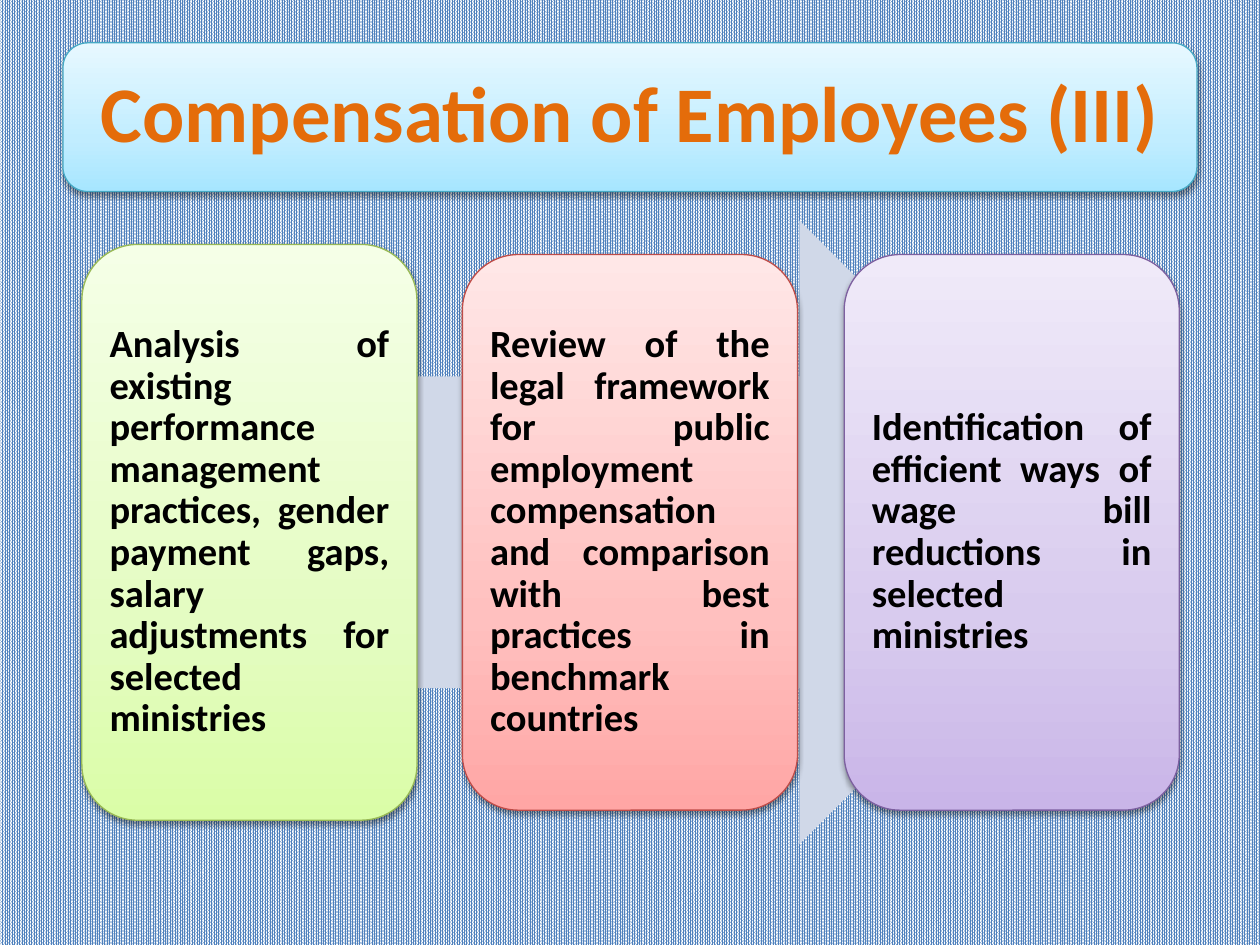
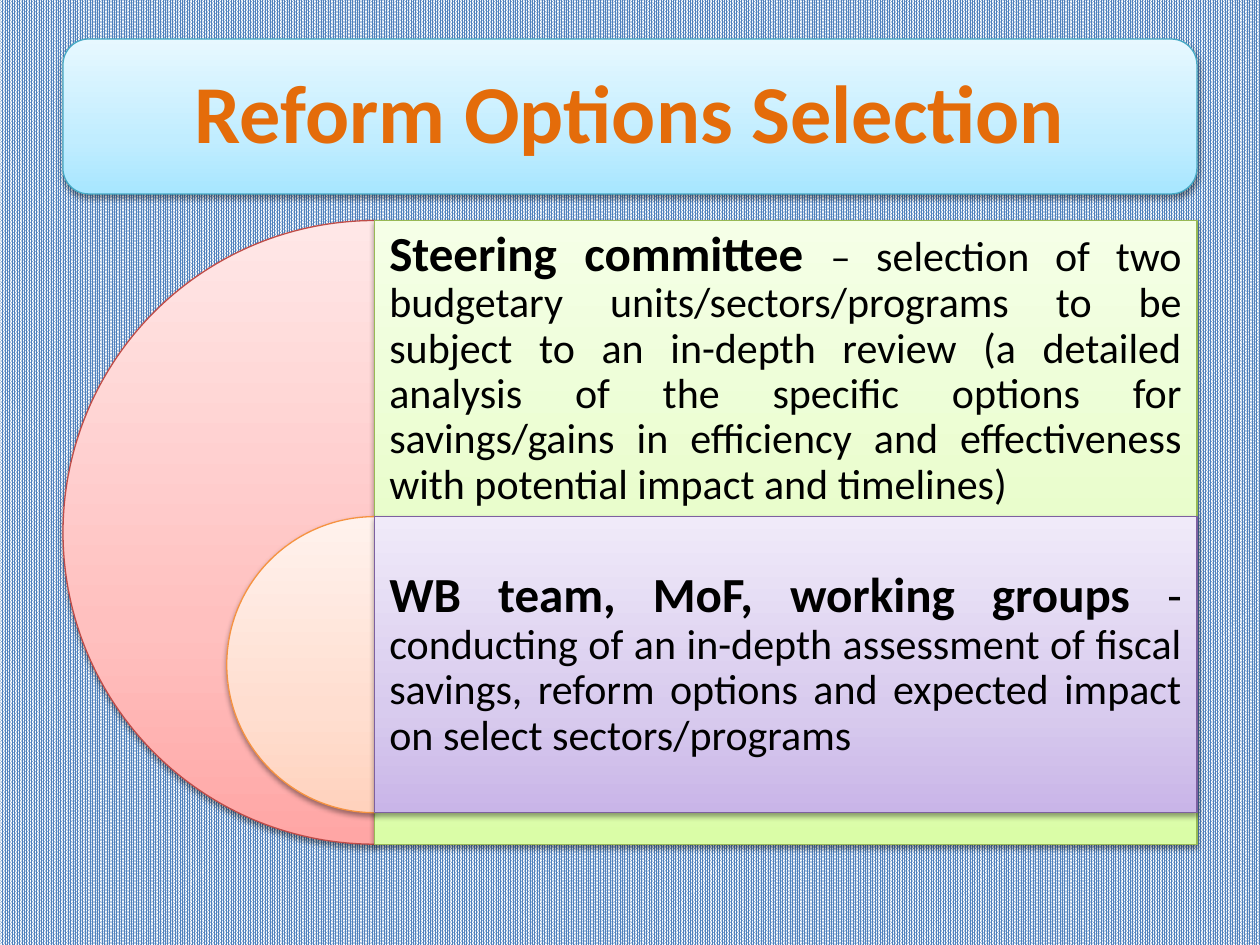
from dataclasses import dataclass

from lxml import etree
from pptx import Presentation
from pptx.dml.color import RGBColor
from pptx.enum.dml import MSO_PATTERN
from pptx.enum.shapes import MSO_SHAPE
from pptx.enum.text import MSO_ANCHOR, MSO_AUTO_SIZE, PP_ALIGN
from pptx.oxml.ns import qn
from pptx.util import Pt

ROUNDED = MSO_SHAPE.ROUNDED_RECTANGLE
RECTANGLE = MSO_SHAPE.RECTANGLE
PIE = MSO_SHAPE.PIE
RIGHT_ARROW = MSO_SHAPE.RIGHT_ARROW
MIDDLE = MSO_ANCHOR.MIDDLE
CENTER = PP_ALIGN.CENTER
JUSTIFY = PP_ALIGN.JUSTIFY
PX = 9144
TITLE_ONLY = 5


@dataclass(frozen=True)
class Theme:
    font: str = "Calibri"
    title: str = "E46C0A"
    text: str = "000000"
    pattern: str = "4F81BD"
    paper: str = "FFFFFF"
    arrow: str = "D0D8E8"
    blue: tuple = ("A7E6FF", "C1EDFF", "E7F8FF", "46AAC5")
    green: tuple = ("DAFDA7", "E4FCC2", "F5FFE7", "98B955")
    red: tuple = ("FFA6A5", "FFC0BF", "FFE7E7", "BF4C48")
    purple: tuple = ("C9B5E8", "D8CBEE", "F0EAF9", "7D60A0")
    orange: tuple = ("FFD2BD", "FFDED0", "FFF2ED", "F69240")
    card_size: int = 22
    lead_size: int = 28
    body_size: int = 24


theme = Theme()


def add_glossy(page, kind, left, top, width, height, palette):
    shape = page.shapes.add_shape(kind, left * PX, top * PX, width * PX, height * PX)
    *tones, edge = palette
    shape.fill.gradient()
    shape.fill.gradient_angle = 90
    stops = shape.element.spPr.find(".//" + qn("a:gsLst"))
    stops.clear()
    for position, tone in zip((0, 35000, 100000), tones):
        stop = etree.SubElement(stops, qn("a:gs"), pos=str(position))
        etree.SubElement(stop, qn("a:srgbClr"), val=tone)
    shape.line.color.rgb = RGBColor.from_string(edge)
    shape.line.width = Pt(0.75)
    shape.shadow.inherit = False
    effects = shape.element.spPr.find(qn("a:effectLst"))
    shadow = etree.SubElement(effects, qn("a:outerShdw"), blurRad="40000",
                              dist="20000", dir="5400000", rotWithShape="0")
    shade = etree.SubElement(shadow, qn("a:srgbClr"), val=theme.text)
    etree.SubElement(shade, qn("a:alpha"), val="38000")
    return shape


def write_text(shape, spans, inset, align, color, extra_bottom=0):
    frame = shape.text_frame
    frame.word_wrap = True
    frame.auto_size = MSO_AUTO_SIZE.NONE
    frame.vertical_anchor = MIDDLE
    frame.margin_left = frame.margin_top = frame.margin_right = inset * PX
    frame.margin_bottom = (inset + extra_bottom) * PX
    para = frame.paragraphs[0]
    para.alignment = align
    para.line_spacing = 0.9
    para.space_before = Pt(0)
    para.font.name = theme.font
    para.font.color.rgb = RGBColor.from_string(color)
    for text, size, bold in spans:
        span = para.add_run()
        span.text = text
        span.font.size = Pt(size)
        span.font.bold = bold


deck = Presentation()
deck.slide_width = 1000 * PX
deck.slide_height = 750 * PX

banners = [
    ("Compensation of Employees (III)", 45, 34, 118, 19),
    ("Reform Options Selection", 47, 31, 123, 20),
]
pages = []
for heading, size, top, height, inset in banners:
    page = deck.slides.add_slide(deck.slide_layouts[TITLE_ONLY])
    backdrop = page.background.fill
    backdrop.patterned()
    backdrop.pattern = MSO_PATTERN.PERCENT_90
    backdrop.fore_color.rgb = RGBColor.from_string(theme.pattern)
    backdrop.back_color.rgb = RGBColor.from_string(theme.paper)
    banner = add_glossy(page, ROUNDED, 50, top, 900, height, theme.blue)
    title = page.shapes.title
    title.left, title.top = 56 * PX, (top + 6) * PX
    title.width, title.height = 888 * PX, (height - 12) * PX
    write_text(title, [(heading, size, True)], inset, CENTER, theme.title)
    banner.element.addnext(title.element)
    pages.append(page)

compensation_page, selection_page = pages

arrow = compensation_page.shapes.add_shape(
    RIGHT_ARROW, 117 * PX, 175 * PX, 765 * PX, 495 * PX)
arrow.fill.solid()
arrow.fill.fore_color.rgb = RGBColor.from_string(theme.arrow)
arrow.line.fill.background()
arrow.shadow.inherit = False

cards = [
    (457, theme.green, "Analysis of existing performance management practices, gender "
     "payment gaps, salary adjustments for selected ministries"),
    (441, theme.red, "Review of the legal framework for public employment compensation "
     "and comparison with best practices in benchmark countries"),
    (441, theme.purple, "Identification of efficient ways of wage bill reductions in "
     "selected ministries"),
]
for index, (height, palette, text) in enumerate(cards):
    card = add_glossy(compensation_page, ROUNDED, 65 + index * 605 // 2,
                      422 - height // 2, 266, height, palette)
    write_text(card, [(text, theme.card_size, True)], 9, JUSTIFY, theme.text)

panel_left = 297
panels = [
    (175, 495, 260, theme.red, theme.green, [
        ("Steering committee ", theme.lead_size, True),
        ("– ", 23, False),
        ("selection of two budgetary units/sectors/programs to be subject to an "
         "in-depth review (a detailed analysis of the specific options for "
         "savings/gains in efficiency and effectiveness with potential impact and "
         "timelines)", theme.body_size, False),
    ]),
    (410, 235, 0, theme.orange, theme.purple, [
        ("WB team, MoF, working groups ", theme.lead_size, True),
        ("- ", 27, False),
        ("conducting of an in-depth assessment of fiscal savings, reform options and "
         "expected impact on select sectors/programs", theme.body_size, False),
    ]),
]
for top, size, covered, disc_palette, panel_palette, spans in panels:
    half_disc = add_glossy(selection_page, PIE, panel_left - size // 2, top,
                           size, size, disc_palette)
    half_disc.adjustments[0] = 54
    half_disc.adjustments[1] = 162
    panel = add_glossy(selection_page, RECTANGLE, panel_left, top, 653, size,
                       panel_palette)
    write_text(panel, spans, 12, JUSTIFY, theme.text, covered)

deck.save("out.pptx")
